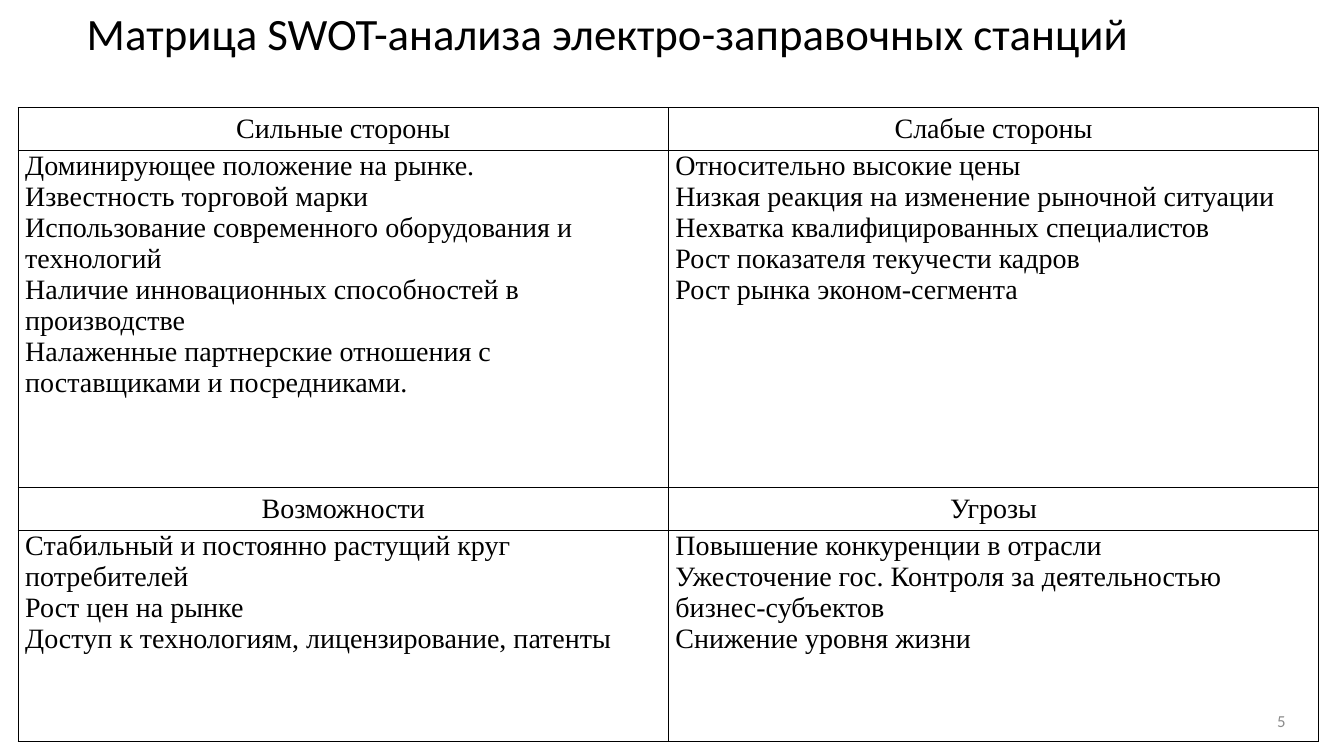
from pptx import Presentation
from pptx import util as u
from pptx.dml.color import RGBColor
from pptx.enum import text as t
from pptx.oxml import parse_xml
from pptx.oxml.ns import nsdecls

BLACK = RGBColor(0x00, 0x00, 0x00)
GREY = RGBColor(0x8C, 0x8C, 0x8C)

SWOT = [
    ("Сильные стороны", [
        "Доминирующее положение на рынке.",
        "Известность торговой марки",
        "Использование современного оборудования и технологий",
        "Наличие инновационных способностей в производстве",
        "Налаженные партнерские отношения с поставщиками и посредниками."]),
    ("Слабые стороны", [
        "Относительно высокие цены",
        "Низкая реакция на изменение рыночной ситуации",
        "Нехватка квалифицированных специалистов",
        "Рост показателя текучести кадров",
        "Рост рынка эконом-сегмента"]),
    ("Возможности", [
        "Стабильный и постоянно растущий круг потребителей",
        "Рост цен на рынке",
        "Доступ к технологиям, лицензирование, патенты"]),
    ("Угрозы", [
        "Повышение конкуренции в отрасли",
        "Ужесточение гос. Контроля за деятельностью бизнес-субъектов",
        "Снижение уровня жизни"]),
]


def write(frame, lines, size, font, color=BLACK, align=t.PP_ALIGN.LEFT):
    """Fill a text frame with one paragraph per line."""
    for i, line in enumerate(lines):
        para = frame.paragraphs[0] if i == 0 else frame.add_paragraph()
        para.alignment = align
        run = para.add_run()
        run.text = line
        run.font.size = u.Pt(size)
        run.font.name = font
        run.font.color.rgb = color


class Deck:
    head = "Calibri"
    body = "Times New Roman"

    def __init__(self):
        self.prs = Presentation()
        self.prs.slide_width = u.Inches(13.33)
        self.prs.slide_height = u.Inches(7.5)
        self.slide = self.prs.slides.add_slide(self.prs.slide_layouts[5])

    def title(self, line, *box):
        shape = self.slide.shapes.title
        shape.left, shape.top, shape.width, shape.height = map(u.Inches, box)
        frame = shape.text_frame
        frame.word_wrap = True
        frame.auto_size = t.MSO_AUTO_SIZE.NONE
        frame.vertical_anchor = t.MSO_ANCHOR.MIDDLE
        write(frame, [line], 32, self.head, align=t.PP_ALIGN.CENTER)

    def label(self, line, *box):
        frame = self.slide.shapes.add_textbox(*map(u.Inches, box)).text_frame
        frame.word_wrap = True
        frame.vertical_anchor = t.MSO_ANCHOR.MIDDLE
        write(frame, [line], 12, self.head, GREY, t.PP_ALIGN.RIGHT)

    def cell(self, cell, lines, header):
        cell.margin_left = cell.margin_right = u.Inches(0.07)
        cell.margin_top = cell.margin_bottom = 0
        cell.vertical_anchor = t.MSO_ANCHOR.MIDDLE if header else t.MSO_ANCHOR.TOP
        align = t.PP_ALIGN.CENTER if header else t.PP_ALIGN.LEFT
        write(cell.text_frame, lines, 20, self.body, align=align)
        # Borders come before the fill in the cell properties
        props = cell._tc.get_or_add_tcPr()
        for side in ("lnL", "lnR", "lnT", "lnB"):
            props.append(parse_xml(
                f'<a:{side} {nsdecls("a")} w="{u.Pt(1)}"><a:solidFill>'
                f'<a:srgbClr val="{BLACK}"/></a:solidFill></a:{side}>'))
        cell.fill.background()

    def matrix(self, parts, rows, *box):
        table = self.slide.shapes.add_table(
            len(rows), 2, *map(u.Inches, box)).table
        table.first_row = table.horz_banding = False
        for row, height in zip(table.rows, rows):
            row.height = u.Inches(height)
        # Each quadrant takes a header cell and the list cell below it
        for i, (name, lines) in enumerate(parts):
            row, col = i // 2 * 2, i % 2
            self.cell(table.cell(row, col), [name], True)
            self.cell(table.cell(row + 1, col), lines, False)


def main():
    deck = Deck()
    # Heading
    deck.title("Матрица SWOT-анализа электро-заправочных станций",
               0.18, 0, 11.7, 0.64)
    # SWOT matrix
    deck.matrix(SWOT, [0.42, 3.35, 0.42, 2.1], 0.18, 1.07, 12.9, 6.29)
    # Page number
    deck.label("5", 9.42, 6.95, 3.43, 0.4)
    deck.prs.save("out.pptx")


if __name__ == "__main__":
    main()
